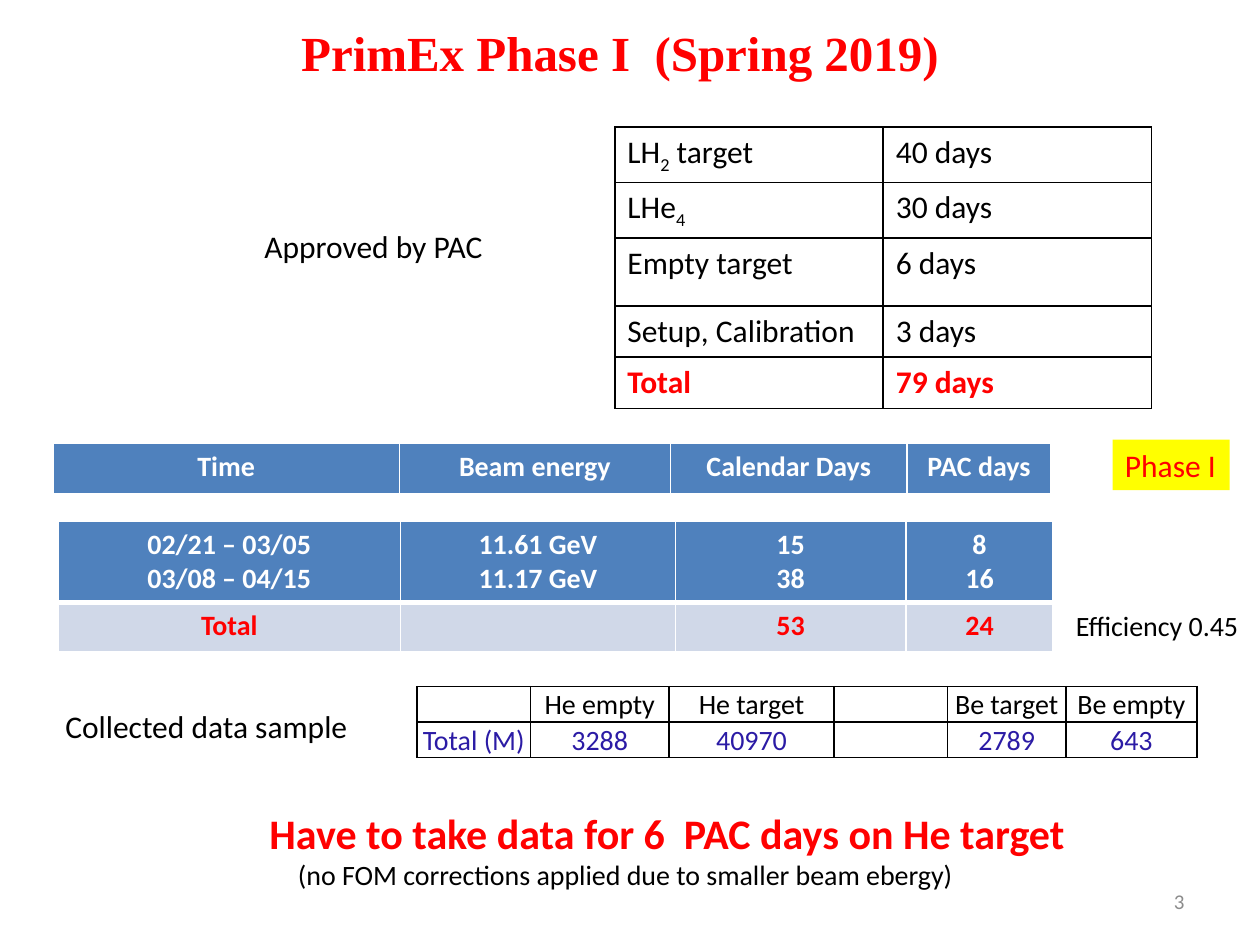
from dataclasses import dataclass

from lxml import etree
from pptx import Presentation
from pptx import util as u
from pptx.dml.color import RGBColor
from pptx.enum import text
from pptx.oxml import ns

LEFT, CENTER, RIGHT = text.PP_ALIGN.LEFT, text.PP_ALIGN.CENTER, text.PP_ALIGN.RIGHT


@dataclass(frozen=True)
class Theme:
    body_font: str = "Calibri"
    title_font: str = "Times New Roman"
    black: str = "000000"
    white: str = "FFFFFF"
    red: str = "FF0000"
    violet: str = "2B1BA5"
    grey: str = "8C8C8C"
    blue: str = "4F81BD"
    pale: str = "D0D8E8"
    yellow: str = "FFFF00"
    title: int = 28
    message: int = 24
    label: int = 18
    cell: int = 16
    number: int = 12


T = Theme()


@dataclass(frozen=True)
class Style:
    size: int
    color: str = T.black
    bold: bool = False
    font: str = T.body_font
    align: text.PP_ALIGN = LEFT
    indent: float = 0


@dataclass(frozen=True)
class Label:
    box: tuple
    lines: tuple
    anchor: text.MSO_ANCHOR = text.MSO_ANCHOR.TOP
    fill: str | None = None


@dataclass(frozen=True)
class Row:
    height: float
    cells: tuple
    style: Style
    fill: str | None = None
    bottom: int = 1


@dataclass(frozen=True)
class Grid:
    left: float
    top: float
    cols: tuple
    rows: tuple
    border: str
    margins: tuple = (0.1, 0.05, 0.1, 0.05)
    anchor: text.MSO_ANCHOR = text.MSO_ANCHOR.TOP


def apply(target, values: dict) -> None:
    for name, value in values.items():
        setattr(target, name, value)


def write(p, content: str, style: Style) -> None:
    p.alignment = style.align
    if style.indent:
        p._p.get_or_add_pPr().set("marL", str(u.Inches(style.indent)))
    if not content:
        end = etree.SubElement(p._p, ns.qn("a:endParaRPr"))
        end.set("sz", str(style.size * 100))
    for i, piece in enumerate(content.split("|") if content else ()):
        if not piece:
            continue
        r = p.add_run()
        r.text = piece
        apply(r.font, {"size": u.Pt(style.size), "bold": style.bold, "name": style.font})
        r.font.color.rgb = RGBColor.from_string(style.color)
        if i % 2:
            r._r.get_or_add_rPr().set("baseline", "-25000")


def write_lines(tf, lines) -> None:
    for i, (content, style) in enumerate(lines):
        write(tf.add_paragraph() if i else tf.paragraphs[0], content, style)


def paint(fill, color: str | None) -> None:
    if color is None:
        fill.background()
    else:
        fill.solid()
        fill.fore_color.rgb = RGBColor.from_string(color)


def add_label(s, label: Label) -> None:
    sp = s.shapes.add_textbox(*map(u.Inches, label.box))
    paint(sp.fill, label.fill)
    apply(sp.text_frame, {"word_wrap": False, "vertical_anchor": label.anchor})
    write_lines(sp.text_frame, label.lines)


def add_borders(cell, color: str, bottom: int) -> None:
    tc_pr = cell._tc.get_or_add_tcPr()
    for i, side in enumerate("LRTB"):
        ln = etree.Element(ns.qn(f"a:ln{side}"))
        ln.set("w", str(u.Pt(bottom if side == "B" else 1)))
        solid = etree.SubElement(ln, ns.qn("a:solidFill"))
        etree.SubElement(solid, ns.qn("a:srgbClr")).set("val", color)
        tc_pr.insert(i, ln)


def add_grid(s, grid: Grid) -> None:
    size = sum(grid.cols), sum(row.height for row in grid.rows)
    frame = s.shapes.add_table(len(grid.rows), len(grid.cols),
                               *map(u.Inches, (grid.left, grid.top, *size)))
    table = frame.table
    apply(table, {"first_row": False, "horz_banding": False})
    for column, width in zip(table.columns, grid.cols):
        column.width = u.Inches(width)
    sides = ("margin_left", "margin_top", "margin_right", "margin_bottom")
    margins = dict(zip(sides, map(u.Inches, grid.margins)))
    for i, row in enumerate(grid.rows):
        table.rows[i].height = u.Inches(row.height)
        for j, content in enumerate(row.cells):
            cell = table.cell(i, j)
            apply(cell, {**margins, "vertical_anchor": grid.anchor})
            paint(cell.fill, row.fill)
            add_borders(cell, grid.border, row.bottom)
            write_lines(cell.text_frame, [(line, row.style) for line in content.split("\n")])


PLAIN = Style(T.label)
PLAIN_TOTAL = Style(T.label, T.red, True)
HEADER = Style(T.cell, T.white, True, align=CENTER)
RUN_TOTAL = Style(T.cell, T.red, True, align=CENTER)
SAMPLE = Style(T.cell, align=CENTER)
SAMPLE_TOTAL = Style(T.cell, T.violet, align=CENTER)
MIDDLE = text.MSO_ANCHOR.MIDDLE

GRIDS = (
    Grid(0.46, 4.14, (2.72, 2.18, 1.83, 1.17), (
        Row(0.64, ("02/21 – 03/05\n03/08 – 04/15", "11.61 GeV\n11.17 GeV", "15\n38", "8\n16"),
            HEADER, T.blue, 3),
        Row(0.39, ("Total", "", "53", "24"), RUN_TOTAL, T.pale),
    ), T.white),
    Grid(4.88, 1.01, (2.13, 2.13), (
        Row(0.44, ("LH|2| target", "40 days"), PLAIN),
        Row(0.44, ("LHe|4|", "30 days"), PLAIN),
        Row(0.54, ("Empty target", "6 days"), PLAIN),
        Row(0.4, ("Setup, Calibration", "3 days"), PLAIN),
        Row(0.4, ("Total", "79 days"), PLAIN_TOTAL),
    ), T.black),
    Grid(3.31, 5.45, (0.9, 1.1, 1.31, 0.9, 0.94, 1.04), (
        Row(0.28, ("", "He empty", "He target", "", "Be target", "Be empty"), SAMPLE),
        Row(0.28, ("Total (M)", "3288", "40970", "", "2789", "643"), SAMPLE_TOTAL),
    ), T.black, (0.01, 0.01, 0.01, 0), text.MSO_ANCHOR.BOTTOM),
    Grid(0.42, 3.52, (2.75, 2.15, 1.88, 1.14), (
        Row(0.41, ("Time", "Beam energy", "Calendar Days", "PAC days"), HEADER, T.blue, 3),
    ), T.white),
)

LABELS = (
    Label((7.17, 6.95, 2.33, 0.4), (("3", Style(T.number, T.grey, align=RIGHT)),), MIDDLE),
    Label((8.44, 4.78, 1.51, 0.37), (("Efficiency 0.45", Style(T.cell)),)),
    Label((2, 1.75, 2.01, 0.4), (("Approved by PAC", PLAIN),)),
    Label((8.83, 3.49, 0.93, 0.4), (("Phase I", Style(T.label, T.red)),), fill=T.yellow),
    Label((0.42, 5.56, 2.53, 0.4), (("Collected data sample", PLAIN),)),
    Label((1.22, 6.36, 7.4, 0.77), (
        ("Have to take data for 6  PAC days on He target",
         Style(T.message, T.red, True, indent=0.82)),
        ("(no FOM corrections applied due to smaller beam ebergy)",
         Style(T.cell, align=CENTER, indent=0.16)),
    )),
)


def main() -> None:
    prs = Presentation()
    apply(prs, {"slide_width": u.Inches(10), "slide_height": u.Inches(7.5)})
    s = prs.slides.add_slide(prs.slide_layouts[0])
    subtitle = s.placeholders[1].element
    subtitle.getparent().remove(subtitle)

    title = s.shapes.title
    apply(title, dict(zip(("left", "top", "width", "height"),
                          map(u.Inches, (0.67, 0.04, 8.5, 0.75)))))
    title.text_frame.vertical_anchor = MIDDLE
    write(title.text_frame.paragraphs[0], "PrimEx Phase I  (Spring 2019)",
          Style(T.title, T.red, True, T.title_font, CENTER))

    for grid in GRIDS:
        add_grid(s, grid)
    for label in LABELS:
        add_label(s, label)
    prs.save("out.pptx")


if __name__ == "__main__":
    main()
